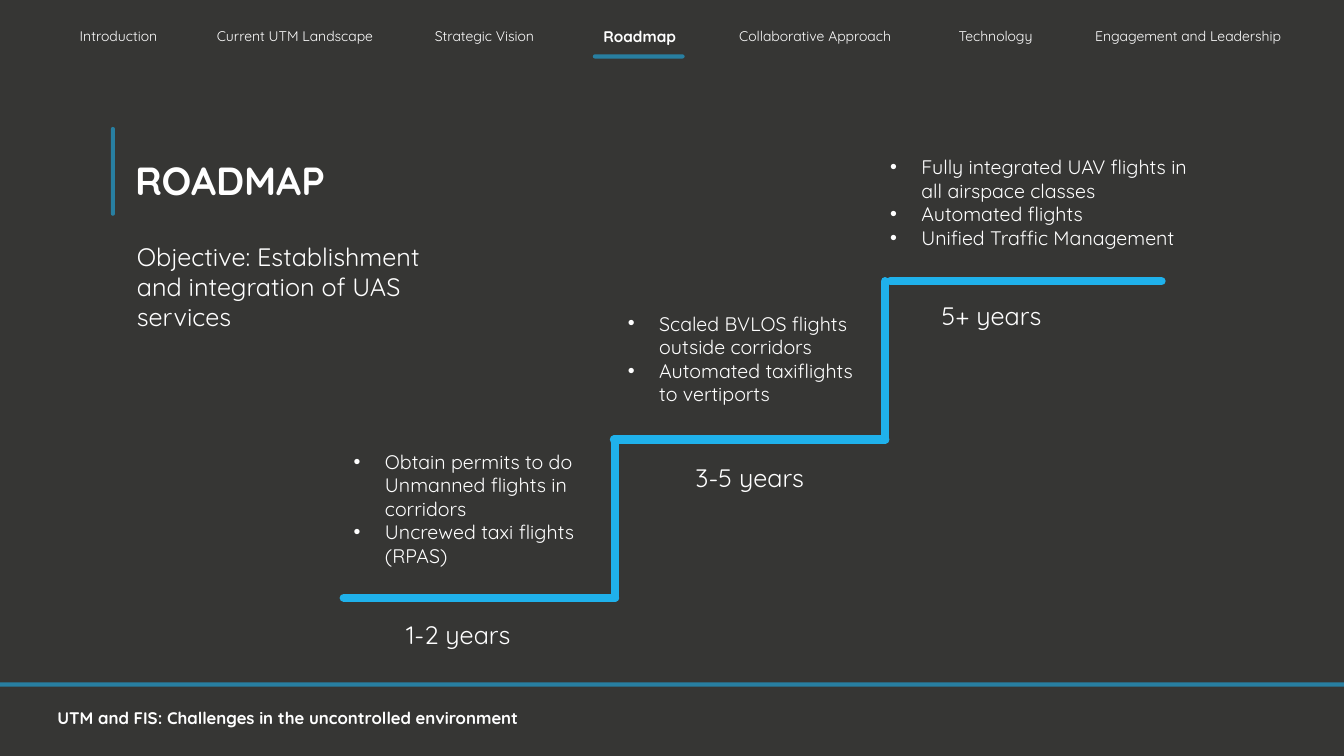
from dataclasses import dataclass

from lxml import etree
from pptx import Presentation
from pptx.dml.color import RGBColor
from pptx.enum.shapes import MSO_CONNECTOR
from pptx.enum.text import MSO_ANCHOR, MSO_AUTO_SIZE, PP_ALIGN
from pptx.oxml.ns import qn
from pptx.util import Inches, Pt

STRAIGHT = MSO_CONNECTOR.STRAIGHT
TOP, MIDDLE = MSO_ANCHOR.TOP, MSO_ANCHOR.MIDDLE
LEFT, CENTER = PP_ALIGN.LEFT, PP_ALIGN.CENTER
NO_AUTOFIT = MSO_AUTO_SIZE.NONE
TITLE_ONLY = 5
PLAIN_TABLE_STYLE = "{2D5ABB26-0587-4C30-8999-92F81FD0307C}"


@dataclass(frozen=True)
class Theme:
    font: str = "Quicksand"
    background: RGBColor = RGBColor(0x36, 0x36, 0x34)
    text: RGBColor = RGBColor(0xFF, 0xFF, 0xFF)
    accent: RGBColor = RGBColor(0x1F, 0xB1, 0xEB)
    title: int = 28
    lead: int = 18
    body: int = 14
    footer: int = 12
    nav: int = 10
    nav_active: int = 11
    rule_width: int = 3
    step_width: int = 6
    rule_opacity: int = 60
    bullet_indent: float = 0.31


def write_text(frame, *texts, theme, size, bold=False, align=LEFT, bullet=False):
    """Write each text as one formatted paragraph of the frame."""
    for index, text in enumerate(texts):
        para = frame.paragraphs[0] if index == 0 else frame.add_paragraph()
        para.alignment = align
        if bullet:
            indent = Inches(theme.bullet_indent)
            properties = para._p.get_or_add_pPr()
            properties.set("marL", str(indent))
            properties.set("indent", str(-indent))
            etree.SubElement(properties, qn("a:buFont"), typeface="Arial")
            etree.SubElement(properties, qn("a:buChar"), char="•")
        span = para.add_run()
        span.text = text
        span.font.name = theme.font
        span.font.size = Pt(size)
        span.font.bold = bold
        span.font.color.rgb = theme.text


class SlideBuilder:
    def __init__(self, slide, theme):
        self.slide = slide
        self.theme = theme
        fill = slide.background.fill
        fill.solid()
        fill.fore_color.rgb = theme.background

    def title(self, text, left, top, width, height):
        box = self.slide.shapes.title
        box.left, box.top = Inches(left), Inches(top)
        box.width, box.height = Inches(width), Inches(height)
        frame = box.text_frame
        frame.auto_size = NO_AUTOFIT
        frame.vertical_anchor = MIDDLE
        write_text(frame, text, theme=self.theme, size=self.theme.title, bold=True)

    def text(self, texts, left, top, width, height, **style):
        box = self.slide.shapes.add_textbox(
            Inches(left), Inches(top), Inches(width), Inches(height))
        box.text_frame.word_wrap = True
        write_text(box.text_frame, *texts, theme=self.theme, **style)

    def line(self, x1, y1, x2, y2, width, opacity=100):
        line = self.slide.shapes.add_connector(
            STRAIGHT, Inches(x1), Inches(y1), Inches(x2), Inches(y2))
        line.line.color.rgb = self.theme.accent
        line.line.width = Pt(width)
        outline = line.line._ln
        outline.set("cap", "rnd")
        if opacity < 100:
            color = outline.find(".//" + qn("a:srgbClr"))
            etree.SubElement(color, qn("a:alpha"), val=str(opacity * 1000))
        etree.SubElement(line._element.spPr, qn("a:effectLst"))

    def rule(self, x1, y1, x2, y2):
        self.line(x1, y1, x2, y2, self.theme.rule_width, self.theme.rule_opacity)

    def navigation(self, sections, active, left, top, height):
        total = sum(width for _, width in sections)
        table = self.slide.shapes.add_table(
            1, len(sections), Inches(left), Inches(top),
            Inches(total), Inches(height)).table
        table.first_row = table.horz_banding = False
        table._tbl.tblPr.find(qn("a:tableStyleId")).text = PLAIN_TABLE_STYLE
        for index, (name, width) in enumerate(sections):
            table.columns[index].width = Inches(width)
            cell = table.cell(0, index)
            cell.fill.background()
            cell.vertical_anchor = TOP
            current = name == active
            size = self.theme.nav_active if current else self.theme.nav
            write_text(cell.text_frame, name, theme=self.theme,
                       size=size, bold=current, align=CENTER)


SECTIONS = [
    ("Introduction", 1.41),
    ("Current\u00a0UTM\u00a0Landscape".replace("\u00a0", " "), 2.09),
    ("Strategic Vision", 1.67),
    ("Roadmap", 1.41),
    ("Collaborative Approach", 2.07),
    ("Technology", 1.51),
    ("Engagement and Leadership", 2.31),
]

# Each stage: tread start, period with its place, goals with their box
STAGES = [
    (3.41, "1-2 years", (3.93, 6.09),
     ["Obtain permits to do Unmanned flights in corridors",
      "Uncrewed taxi flights (RPAS)"], (3.41, 4.41, 2.52, 1.51)),
    (6.09, "3-5 years", (6.8, 4.54),
     ["Scaled BVLOS flights outside corridors",
      "Automated taxiflights to vertiports"], (6.13, 3.04, 2.62, 1.28)),
    (8.83, "5+ years", (9.24, 2.93),
     ["Fully integrated UAV flights in all airspace classes",
      "Automated flights",
      "Unified Traffic Management"], (8.73, 1.49, 3.31, 1.04)),
]
BASE_Y, RISE, TREAD = 5.93, 1.57, 2.69


def main():
    deck = Presentation()
    deck.slide_width, deck.slide_height = Inches(13.33), Inches(7.5)
    theme = Theme()
    page = SlideBuilder(deck.slides.add_slide(deck.slide_layouts[TITLE_ONLY]), theme)

    # Heading and objective
    page.rule(1.12, 1.28, 1.12, 2.12)
    page.title("ROADMAP", 1.24, 0.96, 5.55, 1.65)
    page.text(["Objective: Establishment and integration of UAS services"],
              1.26, 2.34, 3.24, 1.01, size=theme.lead)

    # Staircase with one stage per step
    for index, (start, period, place, goals, goal_box) in enumerate(STAGES):
        y = BASE_Y - index * RISE
        end = start + TREAD
        page.line(start, y, end, y, theme.step_width)
        if index < len(STAGES) - 1:
            page.line(end, y - RISE, end, y, theme.step_width)
        page.text(goals, *goal_box, size=theme.body, bullet=True)
        page.text([period], *place, 2.16, 0.4, size=theme.lead)

    # Footer
    page.text(["UTM and FIS: Challenges in the uncontrolled environment"],
              0.47, 6.97, 6.68, 0.3, size=theme.footer, bold=True)
    page.rule(0, 6.79, 13.33, 6.79)

    # Navigation bar with the current section underlined
    page.navigation(SECTIONS, "Roadmap", 0.47, 0.22, 0.41)
    page.rule(5.9, 0.56, 6.77, 0.56)

    deck.save("out.pptx")


if __name__ == "__main__":
    main()
